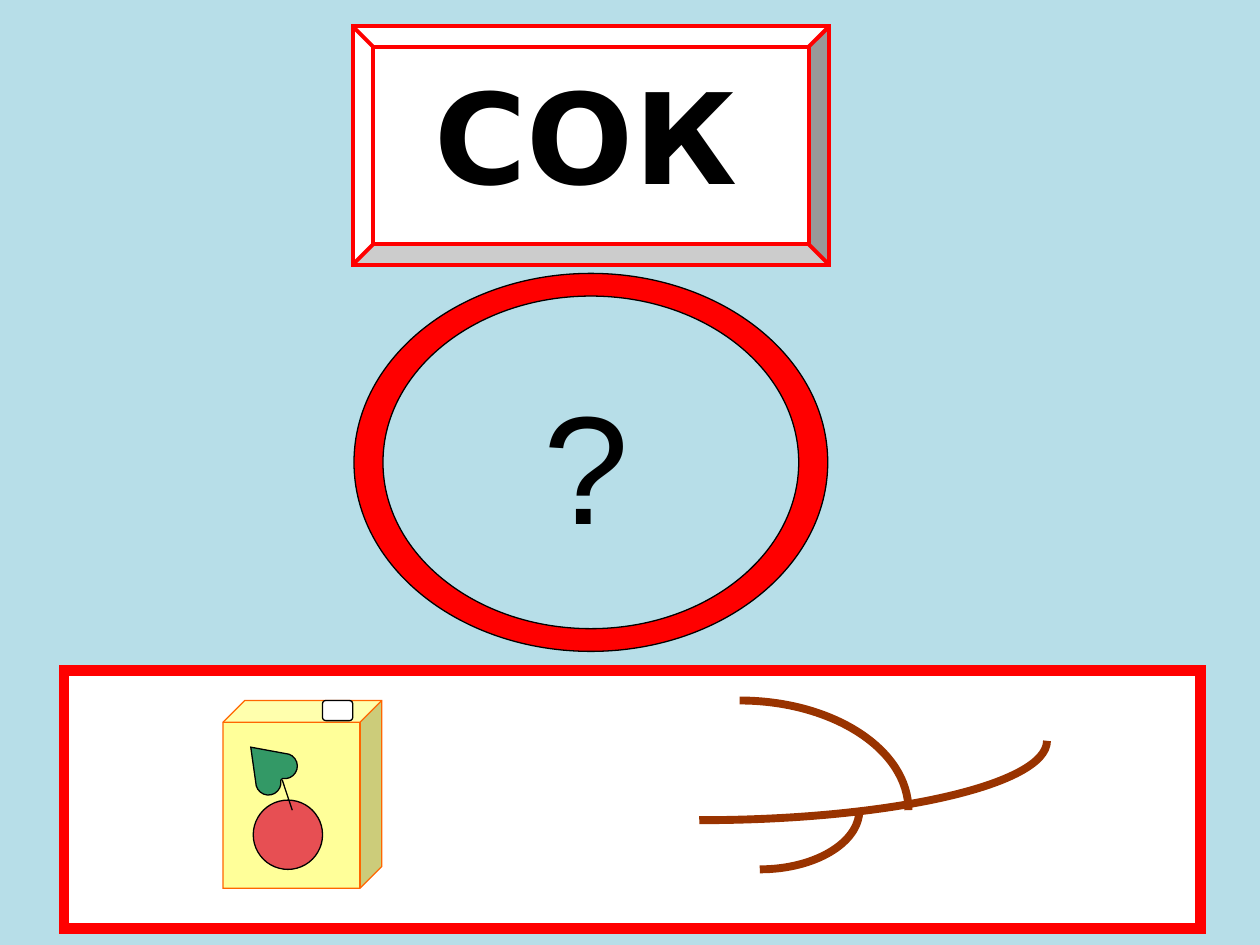
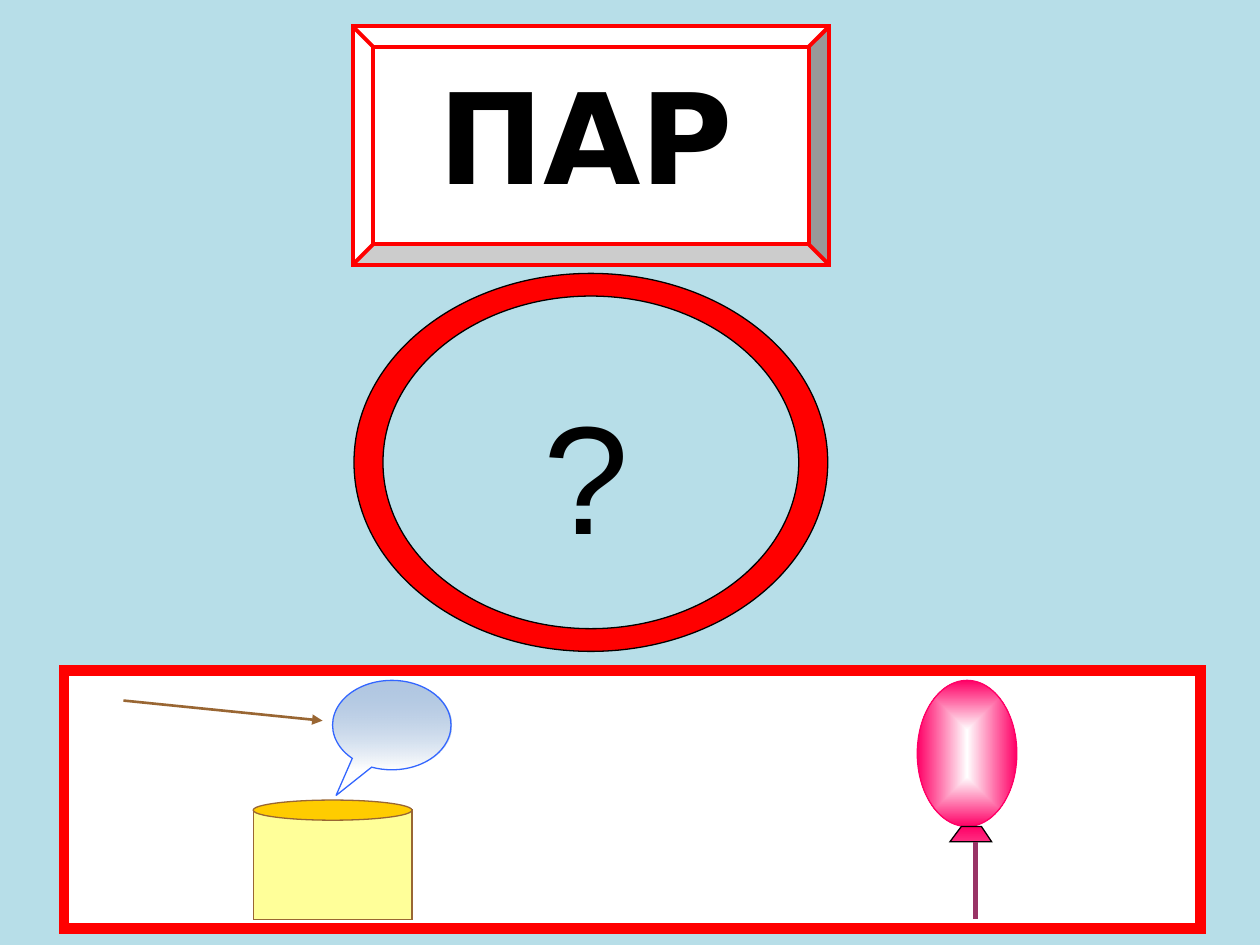
from math import cos, radians, sin, tan

from lxml.etree import SubElement
from pptx import Presentation
from pptx.dml.color import RGBColor
from pptx.enum.shapes import MSO_CONNECTOR as Connector, MSO_SHAPE as Preset
from pptx.enum.text import MSO_ANCHOR as Anchor, MSO_AUTO_SIZE as AutoSize, PP_ALIGN as Align
from pptx.oxml.ns import qn
from pptx.util import Inches, Pt

COLUMNS, ROWS = 10, 7.5
TITLE_ONLY = 5

SKY, WHITE, BLACK, RED = "B7DEE8", "FFFFFF", "000000", "FF0000"
BARK, PAPER, CARTON_EDGE = "993300", "FFFF99", "FF6600"
CHERRY, LEAF = "E74F53", "339966"
POT_EDGE, LID, STEAM, STEAM_EDGE = "996633", "FFCC00", "4F81BD", "3366FF"
PINK, LIGHT_PINK, STRING = "FF0066", "FF2D81", "993366"


def color(value):
    return RGBColor.from_string(value)


def arc(center, radii, start, end, pieces=1):
    """Segments of an elliptical arc: its first point, then one curve per piece."""
    step = radians(end - start) / pieces
    reach = 4 / 3 * tan(step / 4)

    def place(angle, offset=0):
        return (center[0] + radii[0] * (cos(angle) - offset * sin(angle)),
                center[1] + radii[1] * (sin(angle) + offset * cos(angle)))

    angles = [radians(start) + step * index for index in range(pieces + 1)]
    curves = [[place(a, reach), place(b, -reach), place(b)]
              for a, b in zip(angles, angles[1:])]
    return [[place(angles[0])]] + curves


def write(frame, text, size, font, bold=False, anchor=Anchor.TOP):
    frame.word_wrap = True
    frame.vertical_anchor = anchor
    paragraph = frame.paragraphs[0]
    paragraph.alignment = Align.CENTER
    run = paragraph.add_run()
    run.text = text
    run.font.size, run.font.name, run.font.bold = Pt(size), font, bold
    run.font.color.rgb = color(BLACK)


def gradient(shape, stops, centered=False):
    """Fill with (position, colour, opacity) stops, downward or from the centre."""
    shape.fill.gradient()
    fill = shape.element.spPr.find(qn("a:gradFill"))
    for child in list(fill):
        fill.remove(child)
    stop_list = SubElement(fill, qn("a:gsLst"))
    for position, value, opacity in stops:
        stop = SubElement(stop_list, qn("a:gs"), pos=str(position * 1000))
        rgb = SubElement(stop, qn("a:srgbClr"), val=value)
        if opacity < 100:
            SubElement(rgb, qn("a:alpha"), val=str(opacity * 1000))
    if centered:
        shade = SubElement(fill, qn("a:path"), path="shape")
        SubElement(shade, qn("a:fillToRect"), {side: "50000" for side in "ltrb"})
    else:
        SubElement(fill, qn("a:lin"), ang="5400000", scaled="0")


def bend(shape, segments):
    """Turn each run of three line steps that stands for a curve into that curve."""
    steps = iter(list(shape.element.iter(qn("a:moveTo"), qn("a:lnTo"))))
    for segment in segments:
        parts = [next(steps) for _ in segment]
        if len(parts) == 3:
            parts[0].tag = qn("a:cubicBezTo")
            for part in parts[1:]:
                parts[0].append(part[0])
                part.getparent().remove(part)


class Card:
    """Style and current slide; lengths are in grid columns and rows."""

    def __init__(self, presentation):
        self.presentation = presentation
        self.column = presentation.slide_width / COLUMNS
        self.row = presentation.slide_height / ROWS

    def at(self, *lengths):
        units = (self.column, self.row) * 2
        return [round(length * unit) for length, unit in zip(lengths, units)]

    def new_slide(self):
        layout = self.presentation.slide_layouts[TITLE_ONLY]
        self.slide = self.presentation.slides.add_slide(layout)
        self.ungroup()

    def group(self):
        self.shapes = self.slide.shapes.add_group_shape().shapes

    def ungroup(self):
        self.shapes = self.slide.shapes

    def style(self, shape, fill, line, width):
        shape.shadow.inherit = False
        if fill:
            shape.fill.solid()
            shape.fill.fore_color.rgb = color(fill)
        else:
            shape.fill.background()
        shape.line.color.rgb = color(line)
        shape.line.width = Pt(width)
        SubElement(shape.element.spPr.find(qn("a:ln")), qn("a:miter"), lim="800000")
        return shape

    def shape(self, preset, box, fill, line, width=0.75, adjust=()):
        shape = self.shapes.add_shape(preset, *self.at(*box))
        for index, value in enumerate(adjust):
            shape.adjustments[index] = value
        return self.style(shape, fill, line, width)

    def outline(self, *contours, fill=None, line=BLACK, width=0.75):
        """Contours of one-point lines and three-point curves, closed when filled."""
        builder = None
        for contour in contours:
            points = [self.at(*point) for segment in contour for point in segment]
            if builder:
                builder.move_to(*points[0])
            else:
                builder = self.shapes.build_freeform(*points[0])
            builder.add_line_segments(points[1:], close=bool(fill))
        shape = builder.convert_to_shape()
        bend(shape, [segment for contour in contours for segment in contour])
        return self.style(shape, fill, line, width)

    def line(self, start, end, stroke, width, arrow=False):
        connector = self.shapes.add_connector(
            Connector.STRAIGHT, *self.at(*start), *self.at(*end))
        connector.line.color.rgb = color(stroke)
        connector.line.width = Pt(width)
        properties = connector.element.spPr
        if arrow:
            SubElement(properties.find(qn("a:ln")), qn("a:tailEnd"), type="triangle")
        SubElement(properties, qn("a:effectLst"))

    def title(self, text):
        title = self.slide.shapes.title
        title.left, title.top, title.width, title.height = self.at(2.87, 0.44, 3.56, 1.25)
        write(title.text_frame, text, 72, "DejaVu Sans", bold=True, anchor=Anchor.MIDDLE)
        title.element.getparent().append(title.element)  # bring in front of the plate

    def question(self, top):
        box = self.shapes.add_textbox(*self.at(3.75, top, 1.81, 1.57))
        write(box.text_frame, "?", 88, "Arial")
        box.text_frame.auto_size = AutoSize.SHAPE_TO_FIT_TEXT

    def frame(self, word, question_top):
        """Everything the word cards have in common."""
        self.new_slide()
        self.shape(Preset.RECTANGLE, (0, 0, COLUMNS, ROWS), SKY, SKY, 2)
        self.shape(Preset.RECTANGLE, (0.51, 5.32, 9.02, 2.05), WHITE, RED, 6)
        self.shape(Preset.BEVEL, (2.8, 0.21, 3.78, 1.89), WHITE, RED, 2.25, [0.085])
        self.title(word)
        center = (4.69, 3.67)
        self.outline(arc(center, (1.88, 1.5), 180, 540, 4),
                     arc(center, (1.65, 1.32), 180, -180, 4), fill=RED)
        self.question(question_top)


def draw_branch(card):
    card.group()
    for center, radii, start in (
        ((5.55, 5.88), (2.76, 0.63), 90),
        ((5.87, 6.43), (1.34, 0.87), -90),
        ((6.03, 6.43), (0.79, 0.47), 90),
    ):
        card.outline(arc(center, radii, start, 0), line=BARK, width=4.5)
    card.ungroup()


def draw_juice_carton(card):
    card.group()
    card.shape(Preset.CUBE, (1.77, 5.56, 1.26, 1.49), PAPER, CARTON_EDGE, adjust=[0.137])
    card.shape(Preset.OVAL, (2.01, 6.35, 0.55, 0.55), CHERRY, BLACK)
    lobes = (arc((2.26, 6.08), (0.1, 0.1), -70, 100, 5)
             + arc((2.13, 6.21), (0.1, 0.1), -10, 165, 5))
    card.outline([[(1.99, 5.93)]] + lobes, fill=LEAF)
    card.shape(Preset.ROUNDED_RECTANGLE, (2.56, 5.56, 0.24, 0.16), WHITE, BLACK)
    card.line((2.24, 6.19), (2.32, 6.43), BLACK, 0.75)
    card.ungroup()


def draw_steaming_pot(card):
    card.group()
    steam = card.shape(Preset.OVAL_CALLOUT, (2.64, 5.4, 0.94, 0.71), WHITE, STEAM_EDGE,
                       adjust=[-0.471, 0.787])
    gradient(steam, [(0, STEAM, 44), (100, WHITE, 100)])
    card.shape(Preset.RECTANGLE, (2.01, 6.43, 1.26, 0.87), PAPER, POT_EDGE)
    card.shape(Preset.OVAL, (2.01, 6.35, 1.26, 0.16), LID, POT_EDGE)
    card.ungroup()
    card.line((0.98, 5.56), (2.56, 5.72), POT_EDGE, 1.5, arrow=True)


def draw_balloon(card):
    card.group()
    balloon = card.shape(Preset.OVAL, (7.28, 5.4, 0.79, 1.16), PINK, PINK)
    gradient(balloon, [(0, WHITE, 100), (100, PINK, 100)], centered=True)
    corners = [(7.87, 6.68), (7.79, 6.56), (7.63, 6.56), (7.54, 6.68)]
    knot = card.outline([[corner] for corner in corners], fill=PINK)
    gradient(knot, [(0, PINK, 100), (100, LIGHT_PINK, 100)])
    card.line((7.74, 6.68), (7.74, 7.29), STRING, 3)
    card.ungroup()


def main():
    presentation = Presentation()
    presentation.slide_width, presentation.slide_height = Inches(10), Inches(7.5)
    card = Card(presentation)

    # Juice
    card.frame("СОК", question_top=2.89)
    draw_branch(card)
    draw_juice_carton(card)

    # Steam
    card.frame("ПАР", question_top=2.97)
    draw_steaming_pot(card)
    draw_balloon(card)

    presentation.save("out.pptx")


if __name__ == "__main__":
    main()
